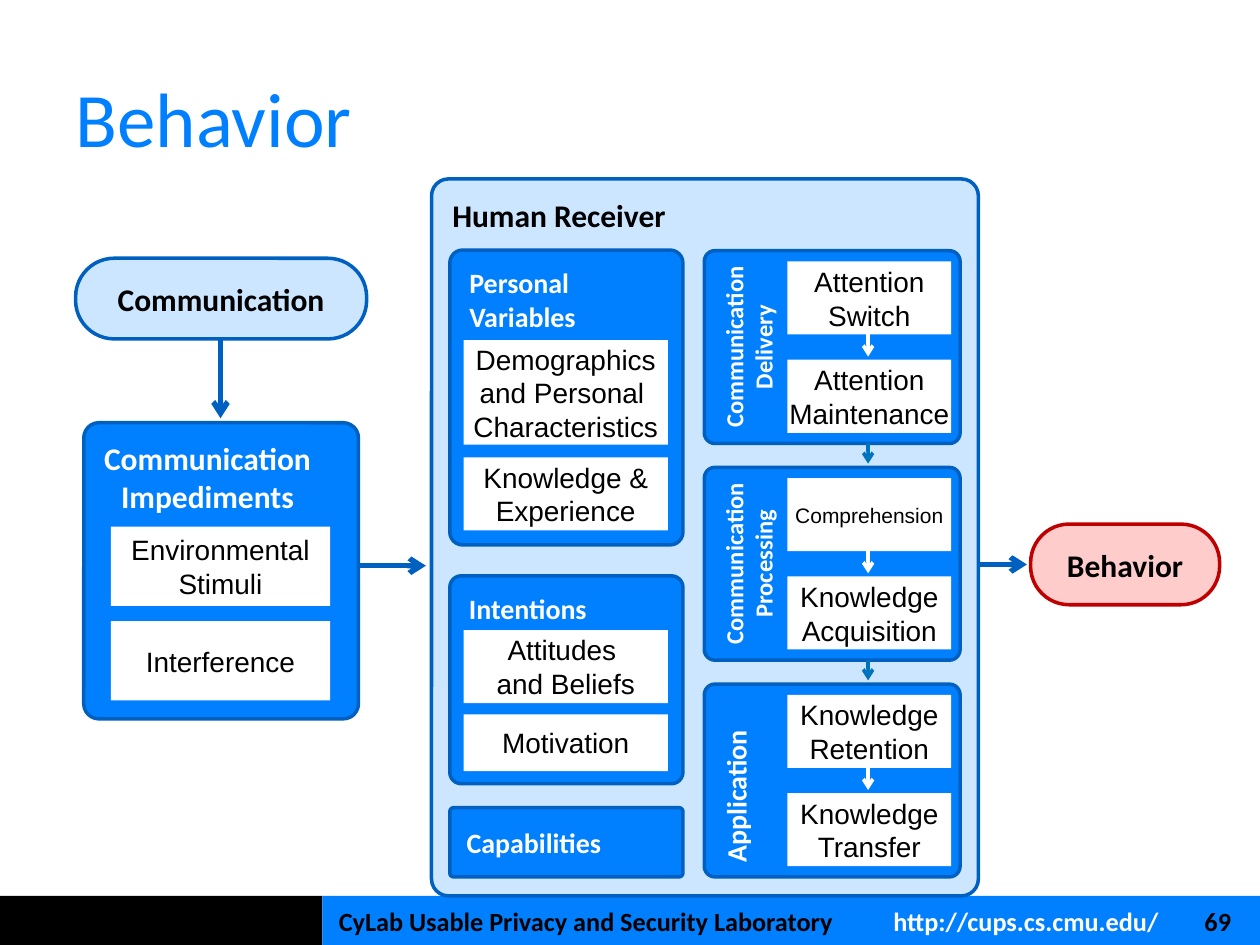
from pptx import Presentation
from pptx.dml.color import RGBColor
from pptx.enum.shapes import MSO_CONNECTOR, MSO_SHAPE
from pptx.enum.text import MSO_ANCHOR, PP_ALIGN
from pptx.oxml.ns import qn
from pptx.util import Inches, Pt
from lxml import etree

RECTANGLE, ROUNDED = MSO_SHAPE.RECTANGLE, MSO_SHAPE.ROUNDED_RECTANGLE
STRAIGHT = MSO_CONNECTOR.STRAIGHT
TOP, MIDDLE = MSO_ANCHOR.TOP, MSO_ANCHOR.MIDDLE
LEFT, CENTER = PP_ALIGN.LEFT, PP_ALIGN.CENTER

BLACK = RGBColor(0x00, 0x00, 0x00)
WHITE = RGBColor(0xFF, 0xFF, 0xFF)
BLUE = RGBColor(0x00, 0x80, 0xFF)
PALE_BLUE = RGBColor(0xCC, 0xE6, 0xFF)
DARK_BLUE = RGBColor(0x00, 0x60, 0xBF)
STEP_BLUE = RGBColor(0x00, 0x73, 0xBF)
PINK = RGBColor(0xFF, 0xCC, 0xCC)
RED = RGBColor(0xBF, 0x00, 0x00)

COLUMNS, ROWS = 100, 75


class Page:
    heading_font = "Calibri"
    card_font = "Arial"

    def __init__(self, deck):
        self.slide = deck.slides.add_slide(deck.slide_layouts[5])
        self.column = deck.slide_width / COLUMNS
        self.row = deck.slide_height / ROWS

    def place(self, left, top, width, height):
        return (round(left * self.column), round(top * self.row),
                round(width * self.column), round(height * self.row))

    def style(self, span, font, size, color, bold):
        span.font.name = font
        span.font.size = Pt(size)
        span.font.color.rgb = color
        span.font.bold = bold

    def label(self, box, text, font, size, color, bold, align, anchor):
        frame = box.text_frame
        frame.text = text
        frame.vertical_anchor = anchor
        for para in frame.paragraphs:
            para.alignment = align
            for span in para.runs:
                self.style(span, font, size, color, bold)

    def inset(self, box, across, down):
        frame = box.text_frame
        frame.margin_left = frame.margin_right = round(across * self.column)
        frame.margin_top = frame.margin_bottom = round(down * self.row)

    def title(self, text, area):
        box = self.slide.shapes.title
        box.left, box.top, box.width, box.height = self.place(*area)
        self.label(box, text, self.heading_font, 44, BLUE, False, LEFT, MIDDLE)

    def block(self, area, fill, line=None, corner=None):
        kind = RECTANGLE if corner is None else ROUNDED
        box = self.slide.shapes.add_shape(kind, *self.place(*area))
        box.shadow.inherit = False
        box.fill.solid()
        box.fill.fore_color.rgb = fill
        if line is None:
            box.line.fill.background()
        else:
            box.line.color.rgb = line
            box.line.width = Pt(2)
        if corner is not None:
            box.adjustments[0] = corner
        return box

    def panel(self, text, area, size=16, fill=BLUE, color=WHITE, corner=0.055,
              align=LEFT, anchor=TOP):
        box = self.block(area, fill, DARK_BLUE, corner)
        self.inset(box, 1.25, 0.95)
        self.label(box, text, self.heading_font, size, color, True, align, anchor)
        return box

    def upright_panel(self, text, area, size, align):
        box = self.panel(text, area, size, align=align)
        self.inset(box, 0.9, 0.9)
        body = box.text_frame._txBody.find(qn("a:bodyPr"))
        body.set("vert", "vert270")

    def pill(self, text, area, fill, line):
        box = self.block(area, fill, line, 0.479)
        self.label(box, text, self.heading_font, 18, BLACK, True, CENTER, MIDDLE)

    def card(self, text, area, size=16):
        box = self.block(area, WHITE)
        self.inset(box, 0, 0)
        box.text_frame.word_wrap = False
        self.label(box, text, self.card_font, size, BLACK, False, CENTER, MIDDLE)

    def arrow(self, start, end, color, width):
        ends = self.place(*start, *end)
        link = self.slide.shapes.add_connector(STRAIGHT, *ends)
        link.line.color.rgb = color
        link.line.width = Pt(width)
        outline = link._element.spPr.find(qn("a:ln"))
        etree.SubElement(outline, qn("a:tailEnd"), type="arrow")
        etree.SubElement(link._element.spPr, qn("a:effectLst"))

    def footer(self, spans, stops):
        self.block((0, 71.1, 25.6, 4), BLACK)
        band = self.block((25.6, 71.1, 74.4, 4), BLUE)
        self.inset(band, 1.3, 0)
        band.text_frame.vertical_anchor = MIDDLE
        para = band.text_frame.paragraphs[0]
        para.alignment = LEFT
        tabs = etree.SubElement(para._p.get_or_add_pPr(), qn("a:tabLst"))
        for stop in stops:
            etree.SubElement(tabs, qn("a:tab"), pos=str(round(stop * self.column)), algn="l")
        for text, color in spans:
            span = para.add_run()
            span.text = text
            self.style(span, self.heading_font, 15, color, True)


def main():
    deck = Presentation()
    deck.slide_width, deck.slide_height = Inches(10), Inches(7.5)
    page = Page(deck)
    page.footer([("CyLab Usable Privacy and Security Laboratory\t", BLACK),
                 ("http://cups.cs.cmu.edu/\t", WHITE), ("69", BLACK)], (44, 68.7))
    page.title("Behavior", (5, 3, 90, 12.5))

    page.pill("Communication", (6, 20.5, 23.1, 6.4), PALE_BLUE, DARK_BLUE)
    impediments = page.panel("Communication\vImpediments", (6.65, 33.55, 21.8, 23.5),
                             18, align=CENTER)
    impediments.text_frame.margin_right = round(3.4 * page.column)
    for row, text in enumerate(("Environmental\vStimuli", "Interference")):
        page.card(text, (8.8, 41.8 + 7.5 * row, 17.4, 6.3))

    page.panel("Human Receiver", (34.25, 14.2, 43.4, 56.9), 18, PALE_BLUE, BLACK, 0.031)
    traits = [
        ("Personal\vVariables", 19.85, 23.4, TOP,
         [("Demographics\vand Personal \vCharacteristics", 27, 8.3),
          ("Knowledge &\vExperience", 36.3, 5.8)]),
        ("Intentions", 45.7, 16.5, TOP,
         [("Attitudes \vand Beliefs", 50, 5.8), ("Motivation", 56.7, 4.5)]),
        ("Capabilities", 64.1, 5.5, MIDDLE, []),
    ]
    for heading, top, height, anchor, cards in traits:
        page.panel(heading, (35.7, top, 18.5, height), anchor=anchor)
        for text, card_top, card_height in cards:
            page.card(text, (36.8, card_top, 16.2, card_height))

    stages = [
        ("Communication\vDelivery", 14, CENTER,
         [("Attention\vSwitch", 16), ("Attention\vMaintenance", 16)]),
        ("Communication\vProcessing", 14, CENTER,
         [("Comprehension", 12), ("Knowledge\vAcquisition", 16)]),
        ("Application", 16, LEFT,
         [("Knowledge\vRetention", 16), ("Knowledge\vTransfer", 16)]),
    ]
    for index, (heading, size, align, cards) in enumerate(stages):
        top = 19.9 + 17.2 * index
        page.upright_panel(heading, (55.9, top, 20.3, 15.3), size, align)
        for row, (text, card_size) in enumerate(cards):
            page.card(text, (62.5, top + 0.85 + 7.8 * row, 13, 5.8), card_size)
        page.arrow((68.9, top + 6.6), (68.9, top + 8.4), WHITE, 2)
        if index < len(stages) - 1:
            page.arrow((68.9, top + 15.3), (68.9, top + 16.9), STEP_BLUE, 2)

    page.pill("Behavior", (81.8, 41.6, 15, 6.4), PINK, RED)
    for start, end in (((17.5, 27), (17.5, 33.2)), ((28.6, 44.9), (33.8, 44.9)),
                       ((77.7, 44.8), (81.5, 44.8))):
        page.arrow(start, end, DARK_BLUE, 3)
    deck.save("out.pptx")


if __name__ == "__main__":
    main()
